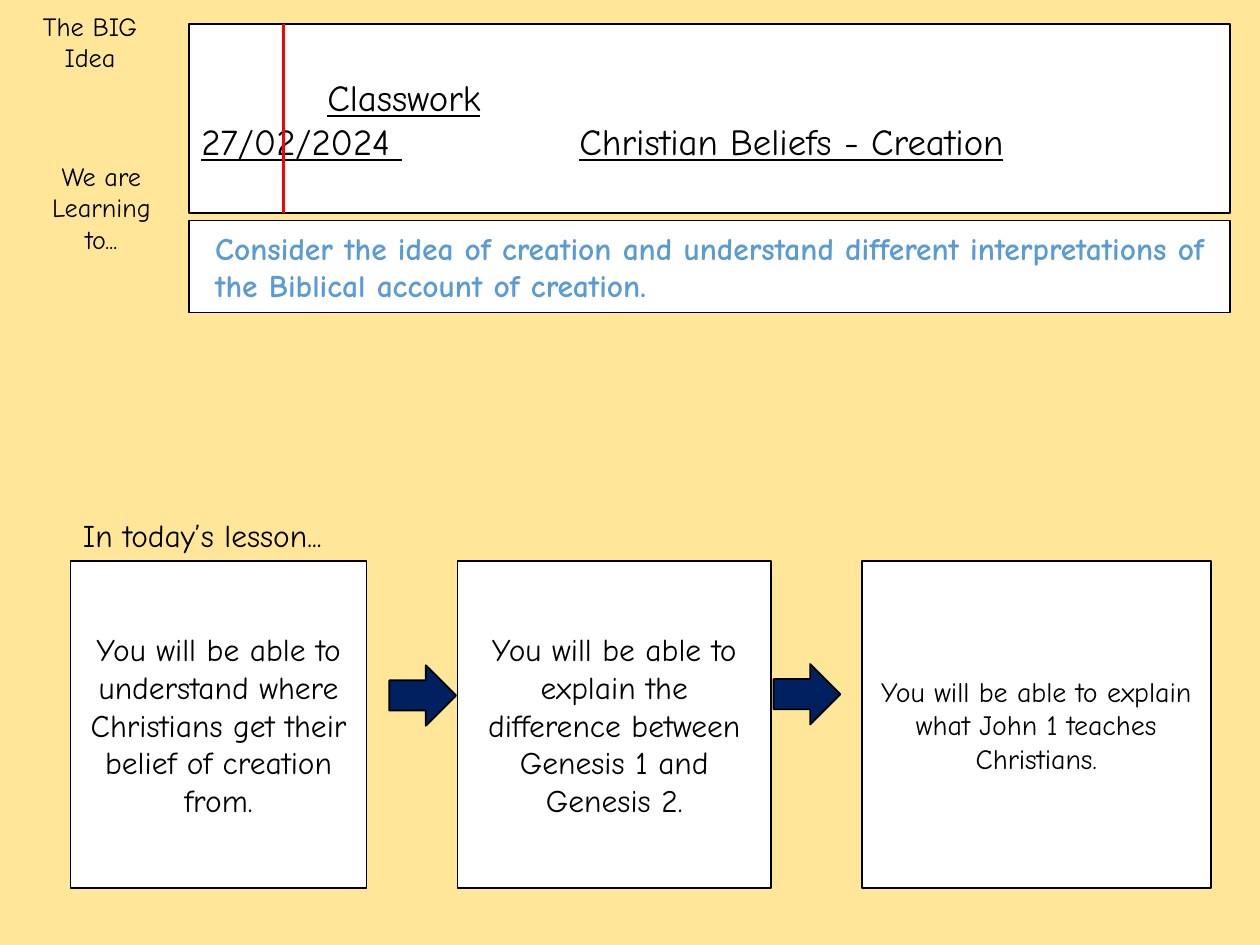
from lxml.etree import SubElement
from pptx import Presentation
from pptx.dml.color import RGBColor
from pptx.enum.shapes import MSO_CONNECTOR as LINK, MSO_SHAPE as SHAPE
from pptx.enum.text import MSO_ANCHOR as ANCHOR, MSO_AUTO_SIZE as FIT, PP_ALIGN as ALIGN
from pptx.oxml.ns import qn
from pptx.util import Inches, Pt

HUES = {"back": "FFE699", "box": "FFFFFF", "ink": "000000",
        "goal": "5B9BD5", "arrow": "002060", "margin": "FF0000"}
LEFT, WIDE = 1.5, 8.26
STEP_TOP, STEP_HIGH = 4.45, 2.6
STEPS = [
    (0.56, 2.35, 18, "You will be able to understand where Christians get their "
                     "belief of creation from."),
    (3.63, 2.49, 18, "You will be able to explain the difference between "
                     "Genesis 1 and Genesis 2."),
    (6.84, 2.77, 16, "You will be able to explain what John 1 teaches Christians."),
]
LABELS = [
    ("The BIG Idea", (0.1, 0.03, 1.23, 0.61), 15, ALIGN.CENTER),
    ("We are Learning to...", (0.19, 1.22, 1.23, 0.86), 15, ALIGN.CENTER),
    ("In today’s lesson...", (0.56, 4.05, 3.09, 0.4), 18, ALIGN.LEFT),
]


def hue(name):
    return RGBColor.from_string(HUES[name])


def add_run(para, text, size, color="ink", **style):
    run = para.add_run()
    run.text = text
    run.font.color.rgb = hue(color)
    for key, value in {"name": "Comic Neue", "size": Pt(size), **style}.items():
        setattr(run.font, key, value)


def add_form(slide, kind, place, fill):
    form = slide.shapes.add_shape(kind, *map(Inches, place))
    form.shadow.inherit = False
    form.fill.solid()
    form.fill.fore_color.rgb = hue(fill)
    form.line.color.rgb = hue("ink")
    form.line.width = Pt(1)
    return form


def add_box(slide, place, align=ALIGN.LEFT):
    """Add a white box and return its text frame."""
    frame = add_form(slide, SHAPE.RECTANGLE, place, "box").text_frame
    frame.word_wrap = True
    frame.vertical_anchor = ANCHOR.MIDDLE
    frame.paragraphs[0].alignment = align
    return frame


def add_label(slide, text, place, size, align):
    frame = slide.shapes.add_textbox(*map(Inches, place)).text_frame
    frame.word_wrap = True
    frame.auto_size = FIT.SHAPE_TO_FIT_TEXT
    para = frame.paragraphs[0]
    para.alignment = align
    add_run(para, text, size)


def set_tabs(para, *stops):
    tabs = SubElement(para._p.get_or_add_pPr(), qn("a:tabLst"))
    for stop in stops:
        SubElement(tabs, qn("a:tab"), pos=str(Inches(stop)), algn="l")


def add_header(slide):
    frame = add_box(slide, (LEFT, 0.19, WIDE, 1.5))
    first, second = frame.paragraphs[0], frame.add_paragraph()
    second.alignment = ALIGN.LEFT
    for para, parts in ((first, ("\t", "Classwork")),
                        (second, ("27/02/2024 ", "\t", "Christian Beliefs - Creation"))):
        set_tabs(para, 1, 3)
        for part in parts:
            add_run(para, part, 21, underline=part != "\t")


def add_goal(slide):
    para = add_box(slide, (LEFT, 1.75, WIDE, 0.73)).paragraphs[0]
    para._p.get_or_add_pPr().set("marL", str(Inches(0.11)))
    add_run(para, "Consider the idea of creation and understand different "
                  "interpretations of the Biblical account of creation.",
            18, "goal", bold=True)


def add_margin(slide):
    ends = map(Inches, (2.25, 0.19, 2.25, 1.69))
    rule = slide.shapes.add_connector(LINK.STRAIGHT, *ends)
    rule.line.color.rgb = hue("margin")
    rule.line.width = Pt(2.25)
    SubElement(rule._element.spPr, qn("a:effectLst"))


def main():
    deck = Presentation()
    deck.slide_width, deck.slide_height = Inches(10), Inches(7.5)
    slide = deck.slides.add_slide(deck.slide_layouts[6])
    slide.background.fill.solid()
    slide.background.fill.fore_color.rgb = hue("back")

    for label in LABELS:
        add_label(slide, *label)
    add_header(slide)
    add_goal(slide)
    add_margin(slide)
    for left, top in ((3.09, 5.28), (6.14, 5.27)):
        add_form(slide, SHAPE.RIGHT_ARROW, (left, top, 0.53, 0.48), "arrow")
    for left, wide, size, text in STEPS:
        frame = add_box(slide, (left, STEP_TOP, wide, STEP_HIGH), ALIGN.CENTER)
        add_run(frame.paragraphs[0], text, size)
    deck.save("out.pptx")


if __name__ == "__main__":
    main()
